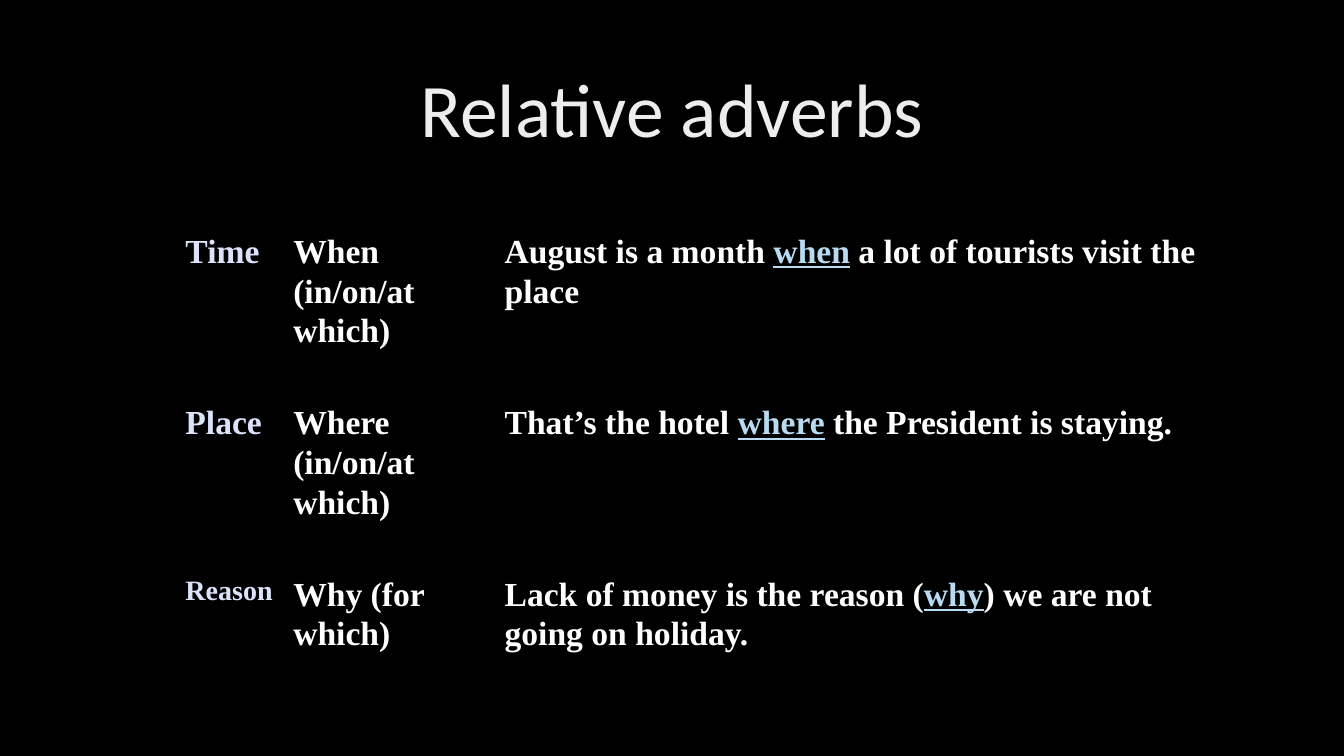
import copy
import dataclasses

import lxml.etree
import pptx
import pptx.dml.color
import pptx.enum.text
import pptx.oxml.ns
import pptx.util

Pt = pptx.util.Pt
qn = pptx.oxml.ns.qn


def rgb(code):
    return pptx.dml.color.RGBColor.from_string(code)


def apply(item, form):
    for name, value in form.items():
        setattr(item, name, value)


@dataclasses.dataclass(frozen=True)
class Theme:
    back: str = "000000"
    label: str = "DAE3FA"
    body: str = "FFFFFF"
    accent: str = "B8DBF1"
    shine: tuple = ((0, "DEDEDE"), (0.28, "EDEDED"), (1, "FFFFFF"))
    head_font: str = "Calibri"
    body_font: str = "Times New Roman"
    head_size: int = 54
    body_size: int = 24
    small_size: int = 20


class Deck:
    def __init__(self, theme):
        self.theme = theme
        self.show = pptx.Presentation()
        apply(self.show, {"slide_width": Pt(960), "slide_height": Pt(540)})
        self.slide = self.show.slides.add_slide(self.show.slide_layouts[5])
        fill = self.slide.background.fill
        fill.solid()
        fill.fore_color.rgb = rgb(theme.back)

    def title(self, text, left, top, width, height):
        box = self.slide.shapes.title
        apply(box, {"left": Pt(left), "top": Pt(top),
                    "width": Pt(width), "height": Pt(height)})
        apply(box.text_frame, {
            "word_wrap": True,
            "auto_size": pptx.enum.text.MSO_AUTO_SIZE.NONE,
            "vertical_anchor": pptx.enum.text.MSO_ANCHOR.MIDDLE})
        para = box.text_frame.paragraphs[0]
        apply(para, {"alignment": pptx.enum.text.PP_ALIGN.CENTER,
                     "line_spacing": 0.9})
        run = para.add_run()
        run.text = text
        apply(run.font, {"name": self.theme.head_font,
                         "size": Pt(self.theme.head_size)})
        self.blend(run)

    def blend(self, run):
        fill = run.font.fill
        fill.gradient()
        fill.gradient_angle = 280
        stops = run._r.rPr.find(".//" + qn("a:gsLst"))
        stops.append(copy.deepcopy(stops[-1]))
        for stop, (place, code) in zip(fill.gradient_stops, self.theme.shine):
            stop.position = place
            stop.color.rgb = rgb(code)

    def table(self, rows, left, top, widths, heights):
        frame = self.slide.shapes.add_table(
            len(rows), len(widths), Pt(left), Pt(top),
            Pt(sum(widths)), Pt(sum(heights)))
        grid = frame.table
        apply(grid, {"first_row": False, "horz_banding": False})
        for col, width in zip(grid.columns, widths):
            col.width = Pt(width)
        for line, height, row in zip(grid.rows, heights, rows):
            line.height = Pt(height)
            for cell, runs in zip(line.cells, row):
                self.cell(cell, runs)

    def cell(self, cell, runs):
        apply(cell, {"margin_left": Pt(5), "margin_right": Pt(5),
                     "margin_top": 0, "margin_bottom": 0})
        self.border(cell)
        cell.fill.background()
        para = cell.text_frame.paragraphs[0]
        para.line_spacing = 1.07
        for text, color, size in runs:
            run = para.add_run()
            run.text = text
            apply(run.font, {"name": self.theme.body_font, "size": Pt(size),
                             "bold": True,
                             "underline": color == self.theme.accent})
            run.font.color.rgb = rgb(color)

    def border(self, cell):
        props = cell._tc.get_or_add_tcPr()
        for side in ("lnL", "lnR", "lnT", "lnB"):
            edge = lxml.etree.SubElement(props, qn("a:" + side), w=str(Pt(1)))
            fill = lxml.etree.SubElement(edge, qn("a:solidFill"))
            lxml.etree.SubElement(fill, qn("a:srgbClr"), val=self.theme.back)


def main():
    theme = Theme()
    deck = Deck(theme)
    deck.title("Relative adverbs", 66, 28.75, 828, 104.4)
    size = theme.body_size
    facts = (
        ("Time", size, "When (in/on/at which)",
         ("August is a month ", "when", " a lot of tourists visit the place")),
        ("Place", size, "Where (in/on/at which)",
         ("That’s the hotel ", "where", " the President is staying.")),
        ("Reason", theme.small_size, "Why (for which)",
         ("Lack of money is the reason (", "why",
          ") we are not going on holiday.")),
    )
    tones = (theme.body, theme.accent, theme.body)
    rows = [
        ([(label, theme.label, small)],
         [(adverb, theme.body, size)],
         [(part, tone, size) for part, tone in zip(parts, tones)])
        for label, small, adverb, parts in facts
    ]
    deck.table(rows, 127.5, 165, (77, 151, 510.5), (122.4, 122.4, 80.6))
    deck.show.save("out.pptx")


if __name__ == "__main__":
    main()
